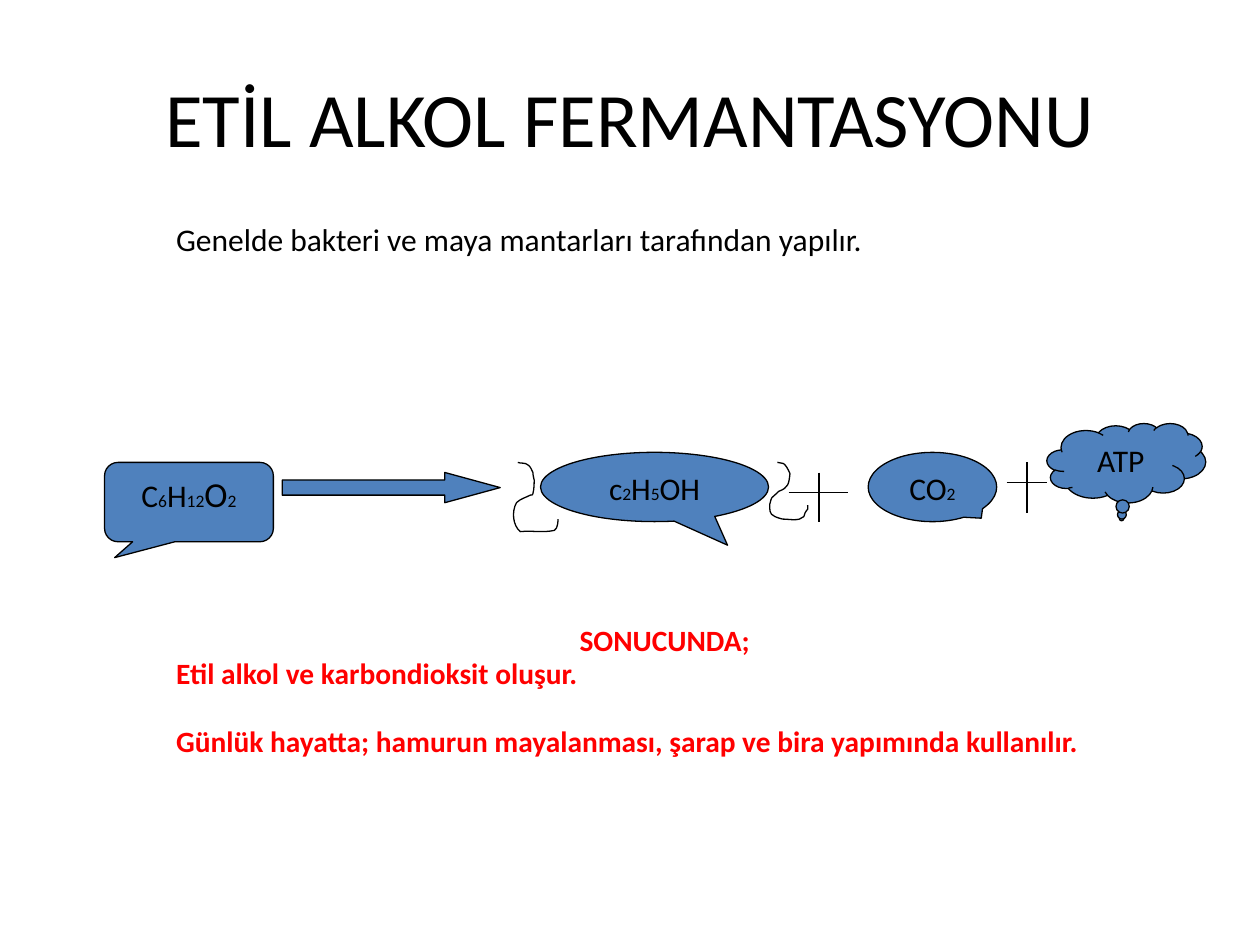
from lxml import etree
from pptx import Presentation
from pptx.dml.color import RGBColor
from pptx.enum.shapes import MSO_CONNECTOR, MSO_SHAPE
from pptx.enum.text import MSO_ANCHOR, PP_ALIGN
from pptx.oxml.ns import qn
from pptx.util import Inches, Pt

BLACK = RGBColor(0x00, 0x00, 0x00)
BLUE = RGBColor(0x4F, 0x81, 0xBD)
RED = RGBColor(0xFF, 0x00, 0x00)
STRAIGHT = MSO_CONNECTOR.STRAIGHT
ROUND_CALLOUT = MSO_SHAPE.ROUNDED_RECTANGULAR_CALLOUT
OVAL_CALLOUT = MSO_SHAPE.OVAL_CALLOUT
CLOUD_CALLOUT = MSO_SHAPE.CLOUD_CALLOUT
RIGHT_ARROW = MSO_SHAPE.RIGHT_ARROW
TOP, MIDDLE = MSO_ANCHOR.TOP, MSO_ANCHOR.MIDDLE
LEFT, CENTER = PP_ALIGN.LEFT, PP_ALIGN.CENTER


def style_run(run, size, color=BLACK, bold=False):
    run.font.name = "Calibri"
    run.font.size = Pt(size)
    run.font.color.rgb = color
    run.font.bold = bold


def add_text(box, anchor, paragraphs, size, color=BLACK, bold=False):
    frame = slide.shapes.add_textbox(*map(Inches, box)).text_frame
    frame.word_wrap = True
    frame.vertical_anchor = anchor
    frame.text = "\n".join(text for text, _ in paragraphs)
    for paragraph, (_, alignment) in zip(frame.paragraphs, paragraphs):
        paragraph.alignment = alignment
        style_run(paragraph.runs[0], size, color, bold)
    return frame


prs = Presentation()
prs.slide_width = Inches(10)
prs.slide_height = Inches(7.5)
slide = prs.slides.add_slide(prs.slide_layouts[6])

handwritten_twos = [
    [(4.11, 3.67),
     (4.13, 3.68), (4.17, 3.67), (4.19, 3.69),
     (4.21, 3.7), (4.22, 3.73), (4.23, 3.75),
     (4.23, 3.77), (4.24, 3.81), (4.24, 3.81),
     (4.24, 3.84), (4.24, 3.88), (4.23, 3.92),
     (4.23, 3.93), (4.22, 3.93), (4.21, 3.93),
     (4.17, 3.95), (4.13, 3.96), (4.1, 3.99),
     (4.06, 4.06), (4.07, 4.17), (4.13, 4.22),
     (4.22, 4.21), (4.31, 4.23), (4.4, 4.21),
     (4.43, 4.2), (4.43, 4.12), (4.43, 4.12)],
    [(6.17, 3.67),
     (6.19, 3.68), (6.22, 3.67), (6.23, 3.69),
     (6.25, 3.71), (6.27, 3.76), (6.27, 3.76),
     (6.26, 3.84), (6.26, 3.87), (6.18, 3.9),
     (6.11, 3.97), (6.13, 3.93), (6.11, 4),
     (6.11, 4.04), (6.1, 4.08), (6.15, 4.1),
     (6.17, 4.11), (6.21, 4.12), (6.21, 4.12),
     (6.27, 4.12), (6.34, 4.14), (6.38, 4.1),
     (6.39, 4.09), (6.39, 4.08), (6.39, 4.07),
     (6.42, 4.02), (6.41, 4.06), (6.41, 4.01)],
]
for controls in handwritten_twos:
    start, *handles = [(Inches(x), Inches(y)) for x, y in controls]
    builder = slide.shapes.build_freeform(*start)
    builder.add_line_segments(handles, close=False)
    two = builder.convert_to_shape()
    two.shadow.inherit = False
    two.fill.background()
    two.line.color.rgb = BLACK
    two.line.width = Pt(0.75)
    segments = list(two._element.iter(qn("a:lnTo")))
    outline = segments[0].getparent()
    for first in range(0, len(segments), 3):
        curve = etree.SubElement(outline, qn("a:cubicBezTo"))
        for segment in segments[first:first + 3]:
            curve.append(segment[0])
            outline.remove(segment)

reaction = [
    (ROUND_CALLOUT, (0.83, 3.67, 1.34, 0.63), (-0.44, 0.7, 0.17),
     [("C", 18), ("6", 10), ("H", 18), ("12", 10), ("O", 20), ("2", 10)]),
    (RIGHT_ARROW, (2.24, 3.75, 1.73, 0.24), (0.5, 1.83), []),
    (OVAL_CALLOUT, (4.29, 3.59, 1.81, 0.55), (0.32, 0.84),
     [("c", 18), ("2", 10), ("H", 18), ("5", 10), ("OH", 18)]),
    (OVAL_CALLOUT, (6.89, 3.59, 1.02, 0.55), (0.38, 0.45),
     [("CO", 18), ("2", 10)]),
    (CLOUD_CALLOUT, (8.31, 3.36, 1.26, 0.63), (-0.03, 0.7), [("ATP", 18)]),
]
for preset, box, adjustments, formula in reaction:
    part = slide.shapes.add_shape(preset, *map(Inches, box))
    part.shadow.inherit = False
    part.fill.solid()
    part.fill.fore_color.rgb = BLUE
    part.line.color.rgb = BLACK
    part.line.width = Pt(0.75)
    for index, value in enumerate(adjustments):
        part.adjustments[index] = value
    part.text_frame.vertical_anchor = TOP
    paragraph = part.text_frame.paragraphs[0]
    paragraph.alignment = CENTER
    for symbol, size in formula:
        run = paragraph.add_run()
        run.text = symbol
        style_run(run, size)

plus_strokes = [
    (6.26, 3.91, 6.73, 3.91),
    (6.5, 3.75, 6.5, 4.14),
    (7.99, 3.83, 8.31, 3.83),
    (8.15, 3.67, 8.15, 4.07),
]
for ends in plus_strokes:
    plus_stroke = slide.shapes.add_connector(STRAIGHT, *map(Inches, ends))
    plus_stroke.line.color.rgb = BLACK
    plus_stroke.line.width = Pt(0.75)
    etree.SubElement(plus_stroke._element.spPr, qn("a:effectLst"))

add_text((0.5, 0.3, 9, 1.25), MIDDLE, [("ETİL ALKOL FERMANTASYONU", CENTER)], 44)

results = add_text((1.3, 4.94, 7.95, 1.5), TOP, [
    ("SONUCUNDA;", CENTER),
    ("Etil alkol ve karbondioksit oluşur.", LEFT),
    ("Günlük hayatta; hamurun mayalanması, şarap ve bira yapımında kullanılır.", LEFT),
], 16.8, RED, True)
for paragraph, gap in zip(results.paragraphs, (3, 3, 22.5)):
    paragraph.line_spacing = 0.8
    paragraph.space_before = Pt(gap)

add_text((1.3, 1.7, 8.03, 0.4), TOP,
         [("Genelde bakteri ve maya mantarları tarafından yapılır.", LEFT)], 18)

prs.save("out.pptx")
